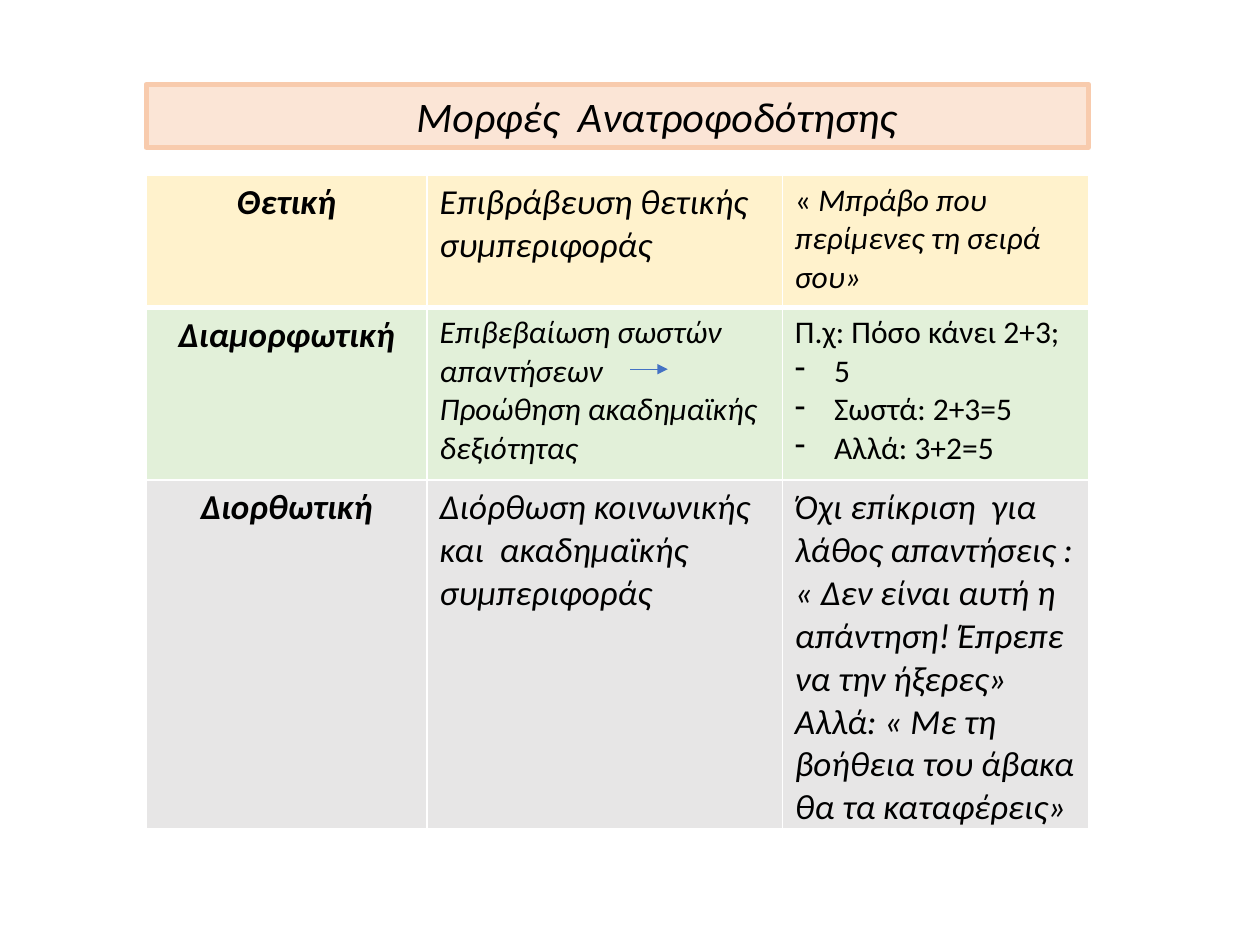
from dataclasses import dataclass

from lxml import etree
from pptx import Presentation
from pptx import util as u
from pptx.dml.color import RGBColor
from pptx.enum import shapes, text
from pptx.oxml import ns


@dataclass(frozen=True)
class Theme:
    font: str = "Calibri"
    ink: str = "000000"
    banner_fill: str = "FBE5D6"
    banner_line: str = "F8CBAD"
    border: str = "FFFFFF"
    arrow: str = "4472C4"
    row_fills: tuple = ("FFF2CC", "E2F0D9", "E7E6E6")
    title: int = 24
    large: int = 20
    medium: int = 18


THEME = Theme()
LEFT, WIDTH = 1.16, 7.48
COLUMNS = (2.23, 2.82, 2.43)
ROWS = (1.05, 1.37, 2.77)
NAMES = ("Θετική", "Διαμορφωτική", "Διορθωτική")
PURPOSES = (
    (THEME.large, ["Επιβράβευση θετικής συμπεριφοράς"]),
    (THEME.medium, ["Επιβεβαίωση σωστών απαντήσεων", "Προώθηση ακαδημαϊκής δεξιότητας"]),
    (THEME.large, ["Διόρθωση κοινωνικής και  ακαδημαϊκής συμπεριφοράς"]),
)
PRAISE = (("« ", False), ("Μπράβο που περίμενες τη σειρά σου»", True))
QUESTION = "Π.χ: Πόσο κάνει 2+3;"
ANSWERS = ("5", "Σωστά: 2+3=5", "Αλλά: 3+2=5")
CORRECTION = (
    "Όχι επίκριση  για λάθος απαντήσεις :",
    "« Δεν είναι αυτή η απάντηση! Έπρεπε να την ήξερες»",
    "Αλλά: « Με τη βοήθεια του άβακα",
    "θα τα καταφέρεις»",
)


def color(value):
    return RGBColor.from_string(value)


def add_run(paragraph, wording, size, bold=False, italic=True):
    run = paragraph.add_run()
    run.text = wording
    font = run.font
    font.name, font.size = THEME.font, u.Pt(size)
    font.bold, font.italic = bold, italic
    font.color.rgb = color(THEME.ink)


def next_paragraph(frame):
    first = frame.paragraphs[0]
    return frame.add_paragraph() if first.runs else first


def add_lines(frame, lines, size, **style):
    for line in lines:
        add_run(next_paragraph(frame), line, size, **style)


def add_dashes(frame, lines, size):
    indent = u.Inches(0.31)
    for line in lines:
        paragraph = next_paragraph(frame)
        add_run(paragraph, line, size, italic=False)
        properties = paragraph._p.get_or_add_pPr()
        properties.set("marL", str(indent))
        properties.set("indent", str(-indent))
        etree.SubElement(properties, ns.qn("a:buChar"), char="-")


def add_banner(slide, wording):
    shape = slide.shapes.add_shape(
        shapes.MSO_SHAPE.RECTANGLE,
        u.Inches(LEFT), u.Inches(0.67), u.Inches(WIDTH), u.Inches(0.5))
    shape.shadow.inherit = False
    shape.fill.solid()
    shape.fill.fore_color.rgb = color(THEME.banner_fill)
    shape.line.color.rgb = color(THEME.banner_line)
    shape.line.width = u.Pt(3)
    frame = shape.text_frame
    frame.word_wrap = True
    frame.auto_size = text.MSO_AUTO_SIZE.SHAPE_TO_FIT_TEXT
    frame.margin_left = u.Inches(0.72)
    frame.paragraphs[0].alignment = text.PP_ALIGN.CENTER
    add_run(frame.paragraphs[0], wording, THEME.title)


def style_cell(cell, fill, bottom, top):
    properties = cell._tc.get_or_add_tcPr()
    for side, points in (("L", 1), ("R", 1), ("T", top), ("B", bottom)):
        line = etree.SubElement(properties, ns.qn(f"a:ln{side}"), w=str(u.Pt(points)))
        solid = etree.SubElement(line, ns.qn("a:solidFill"))
        etree.SubElement(solid, ns.qn("a:srgbClr"), val=THEME.border)
    cell.fill.solid()
    cell.fill.fore_color.rgb = color(fill)


def add_grid(slide):
    table = slide.shapes.add_table(
        len(ROWS), len(COLUMNS),
        u.Inches(LEFT), u.Inches(1.39), u.Inches(WIDTH), u.Inches(sum(ROWS))).table
    for column, width in zip(table.columns, COLUMNS):
        column.width = u.Inches(width)
    for index, (row, height) in enumerate(zip(table.rows, ROWS)):
        row.height = u.Inches(height)
        for cell in row.cells:
            style_cell(cell, THEME.row_fills[index],
                       bottom=3 if index == 0 else 1, top=3 if index == 1 else 1)
    return table


def fill_grid(table):
    for index, (name, (size, lines)) in enumerate(zip(NAMES, PURPOSES)):
        heading = table.cell(index, 0).text_frame
        add_lines(heading, [name], THEME.large, bold=True)
        heading.paragraphs[0].alignment = text.PP_ALIGN.CENTER
        add_lines(table.cell(index, 1).text_frame, lines, size)
    praise, practice, correction = (
        table.cell(index, 2).text_frame for index in range(len(ROWS)))
    for wording, italic in PRAISE:
        add_run(praise.paragraphs[0], wording, THEME.medium, italic=italic)
    add_lines(practice, [QUESTION], THEME.medium, italic=False)
    add_dashes(practice, ANSWERS, THEME.medium)
    add_lines(correction, CORRECTION, THEME.large)


def add_arrow(slide, start, end, y):
    connector = slide.shapes.add_connector(
        shapes.MSO_CONNECTOR.STRAIGHT,
        u.Inches(start), u.Inches(y), u.Inches(end), u.Inches(y))
    connector.line.color.rgb = color(THEME.arrow)
    connector.line.width = u.Pt(0.5)
    etree.SubElement(connector.line._get_or_add_ln(), ns.qn("a:tailEnd"), type="triangle")
    etree.SubElement(connector._element.spPr, ns.qn("a:effectLst"))


def main():
    presentation = Presentation()
    presentation.slide_width = u.Inches(10)
    presentation.slide_height = u.Inches(7.5)
    slide = presentation.slides.add_slide(presentation.slide_layouts[6])
    add_banner(slide, "Μορφές  Ανατροφοδότησης")
    fill_grid(add_grid(slide))
    add_arrow(slide, 5, 5.3, 2.93)
    presentation.save("out.pptx")


if __name__ == "__main__":
    main()
